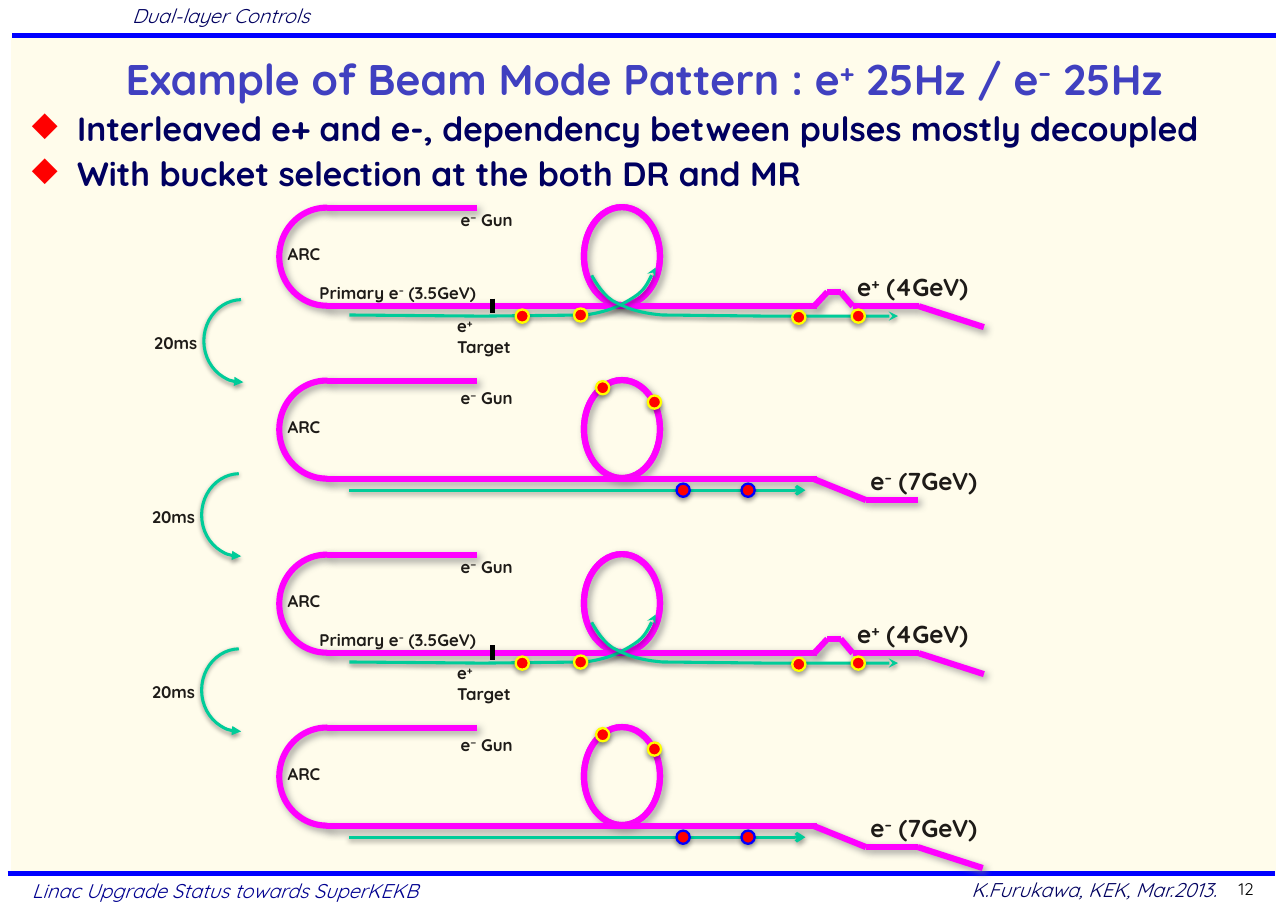
from itertools import pairwise

from lxml import etree
from pptx import Presentation
from pptx import util as u
from pptx.dml.color import RGBColor
from pptx.enum import shapes, text
from pptx.oxml.ns import qn

COLORS = {
    "cream": "FFFCEB", "rule": "0000FF", "title": "4040C0", "navy": "000060",
    "footer": "000090", "ink": "1E1B18", "black": "000000", "beam": "FF00FF",
    "track": "00CC99", "red": "FF0000", "yellow": "FFFF00", "grey": "808080",
}
SOFT = ("grey", 75, 5, 3, 45)
TRACK = ("black", 38, 3.1, 1.6, 90)
BUNCH = ("black", 35, 3.1, 1.8, 90)


def px(n):
    return u.Emu(n * 9144)


def rgb(color):
    return RGBColor.from_string(COLORS[color])


class BeamSlide:
    font = "Quicksand"

    def __init__(self, slide):
        self.slide = slide
        self.shapes = slide.shapes

    def stroke(self, item, color, width, shadow=None, head=None, tail=None):
        item.line.color.rgb = rgb(color)
        item.line.width = u.Pt(width)
        properties = item._element.spPr
        outline = properties.find(qn("a:ln"))
        for end, kind in (("a:headEnd", head), ("a:tailEnd", tail)):
            if kind:
                etree.SubElement(outline, qn(end), type=kind)
        effects = etree.SubElement(properties, qn("a:effectLst"))
        if shadow:
            shade, alpha, blur, distance, angle = shadow
            outer = etree.SubElement(
                effects, qn("a:outerShdw"), blurRad=str(u.Pt(blur)),
                dist=str(u.Pt(distance)), dir=str(angle * 60000),
                algn="ctr", rotWithShape="0")
            tint = etree.SubElement(outer, qn("a:srgbClr"), val=COLORS[shade])
            etree.SubElement(tint, qn("a:alpha"), val=str(alpha * 1000))

    def backdrop(self, x, y, w, h):
        panel = self.shapes.add_shape(
            shapes.MSO_SHAPE.RECTANGLE, px(x), px(y), px(w), px(h))
        panel.fill.solid()
        panel.fill.fore_color.rgb = rgb("cream")
        panel.line.fill.background()
        panel.shadow.inherit = False

    def line(self, start, end, color="beam", width=4, shadow=SOFT, tail=None):
        segment = self.shapes.add_connector(
            shapes.MSO_CONNECTOR.STRAIGHT, *map(px, start + end))
        self.stroke(segment, color, width, shadow, tail=tail)

    def outline(self, kind, x, y, w, h, adjustments, turn=0,
                color="beam", width=4, shadow=SOFT, head=None):
        curve = self.shapes.add_shape(kind, px(x), px(y), px(w), px(h))
        for i, value in enumerate(adjustments):
            curve.adjustments[i] = value
        curve.rotation = turn
        curve.fill.background()
        self.stroke(curve, color, width, shadow, head)

    def bunch(self, x, y, ring):
        dot = self.shapes.add_shape(
            shapes.MSO_SHAPE.OVAL, px(x), px(y), px(12), px(12))
        dot.fill.solid()
        dot.fill.fore_color.rgb = rgb("red")
        self.stroke(dot, ring, 1.5, BUNCH)

    def track(self, points, head=None, tail=None):
        start, *rest = [(px(x), px(y)) for x, y in points]
        builder = self.shapes.build_freeform(*start, scale=1.0)
        builder.add_line_segments(rest, close=False)
        trajectory = builder.convert_to_shape()
        trajectory.fill.background()
        outline = next(trajectory._element.iter(qn("a:path")))
        controls = outline.findall(qn("a:lnTo"))[2:]
        for i in range(0, len(controls), 3):
            bend = etree.SubElement(outline, qn("a:cubicBezTo"))
            for control in controls[i:i + 3]:
                bend.append(control[0])
                outline.remove(control)
        self.stroke(trajectory, "track", 2, TRACK, head, tail)

    def fill_paragraph(self, paragraph, content, size, color, bold, italic, align):
        for i, part in enumerate(content.split("^")):
            run = paragraph.add_run()
            run.text = part
            if i % 2:
                run._r.get_or_add_rPr().set("baseline", "30000")
        paragraph.alignment = align
        paragraph.font.name = self.font
        paragraph.font.size = u.Pt(size)
        paragraph.font.bold = bold
        paragraph.font.italic = italic
        paragraph.font.color.rgb = rgb(color)

    def inset(self, frame, side, top):
        frame.margin_left = frame.margin_right = px(side)
        frame.margin_top = frame.margin_bottom = px(top)

    def label(self, x, y, w, h, content, size=11, color="ink", bold=True,
              italic=False, align=text.PP_ALIGN.LEFT, inset=(0, 0)):
        frame = self.shapes.add_textbox(px(x), px(y), px(w), px(h)).text_frame
        frame.word_wrap = inset != (0, 0)
        self.inset(frame, *inset)
        self.fill_paragraph(frame.paragraphs[0], content, size, color, bold,
                            italic, align)

    def title(self, x, y, w, h, content):
        heading = self.shapes.title
        heading.left, heading.top, heading.width, heading.height = map(px, (x, y, w, h))
        self.shapes._spTree.append(heading._element)
        frame = heading.text_frame
        frame.word_wrap = True
        frame.auto_size = text.MSO_AUTO_SIZE.NONE
        frame.vertical_anchor = text.MSO_ANCHOR.MIDDLE
        self.inset(frame, 11, 5)
        self.fill_paragraph(frame.paragraphs[0], content, 28, "title", True,
                            False, text.PP_ALIGN.CENTER)

    def bullets(self, x, y, w, h, points):
        frame = self.shapes.add_textbox(px(x), px(y), px(w), px(h)).text_frame
        frame.word_wrap = True
        self.inset(frame, 11, 5)
        for i, point in enumerate(points):
            paragraph = frame.add_paragraph() if i else frame.paragraphs[0]
            properties = paragraph._p.get_or_add_pPr()
            properties.set("marL", str(px(41)))
            properties.set("indent", str(px(-41)))
            tint = etree.SubElement(properties, qn("a:buClr"))
            etree.SubElement(tint, qn("a:srgbClr"), val=COLORS["red"])
            etree.SubElement(properties, qn("a:buChar"), char="◆")
            self.fill_paragraph(paragraph, point, 22, "navy", True, False,
                                text.PP_ALIGN.LEFT)
            if i:
                paragraph.space_before = u.Pt(3)

    def linac(self, top, bends):
        base = top + 89
        self.outline(shapes.MSO_SHAPE.DONUT, 520, top + 9, 89, 69, [0], 270)
        self.outline(shapes.MSO_SHAPE.BLOCK_ARC, 252, top + 1, 89, 86,
                     [108, 0, 0], 270)
        self.label(261, top + 32, 35, 19, "ARC")
        self.line((297, top), (433, top))
        self.line((296, base), (742, base))
        for (x1, y1), (x2, y2) in pairwise(bends):
            self.line((x1, base + y1), (x2, base + y2))

    def positron(self, top):
        base = top + 89
        self.linac(top, [(739, 0), (751, -13), (763, -13), (774, 0),
                         (834, 0), (893, 19)])
        self.line((447, base - 7), (447, base + 6), "black", 3, None)
        self.label(418, top + 1, 52, 19, "e^−^ Gun")
        self.label(415, base + 9, 64, 19, "e^+^ Target")
        self.label(290, base - 21, 156, 19, "Primary e^–^ (3.5GeV)")
        self.label(778, base - 31, 104, 27, "e^+^ (4GeV)", 16)
        inward = [(317, 8), (438, 9), (531, 8), (553, 5), (564, -1),
                  (575, -8), (586, -15), (595, -35), (595, -35)]
        outward = [(815, 9), (693, 9), (601, 8), (578, 6), (567, 1),
                   (556, -5), (546, -11), (537, -28), (537, -28)]
        self.track([(x, base + y) for x, y in inward], tail="stealth")
        self.track([(x, base + y) for x, y in outward], head="stealth")
        for x, y in ((719, 4), (773, 3), (468, 3), (521, 2)):
            self.bunch(x, base + y, "yellow")

    def electron(self, top, last):
        base = top + 89
        self.linac(top, [(739, 0), (786, 19), (833, 19)] + [(892, 38)] * last)
        self.label(418, top + 6, 52, 19, "e^−^ Gun")
        self.label(790, base - 12, 102, 27, "e^–^ (7GeV)", 16)
        self.line((317, base + 10), (731, base + 10), "track", 2, TRACK, "arrow")
        for x, y, ring in ((588, 13, "yellow"), (541, 0, "yellow"),
                           (614, 93, "rule"), (673, 93, "rule")):
            self.bunch(x, top + y, ring)


def main():
    deck = Presentation()
    deck.slide_width, deck.slide_height = px(1169), px(827)
    page = BeamSlide(deck.slides.add_slide(deck.slide_layouts[5]))

    page.backdrop(10, 32, 1148, 762)
    page.line((11, 32), (1158, 32), "rule", 3, None)
    page.line((7, 793), (1157, 793), "rule", 3, None)
    page.title(18, 32, 1133, 78,
               "Example of Beam Mode Pattern : e^+^ 25Hz / e^–^ 25Hz")
    page.bullets(18, 93, 1151, 110, [
        "Interleaved e+ and e-, dependency between pulses mostly decoupled",
        "With bucket selection at the both DR and MR"])

    right = text.PP_ALIGN.RIGHT
    page.label(109, -2, 325, 33, "Dual-layer Controls", 13, "navy",
               False, True, inset=(11, 5))
    page.label(18, 793, 401, 33, "Linac Upgrade Status towards SuperKEKB", 13,
               "footer", False, True, inset=(11, 5))
    page.label(794, 792, 321, 33, "K.Furukawa, KEK, Mar.2013.", 13, "navy",
               False, True, right, (11, 5))
    page.label(1081, 793, 68, 28, "12", 11, "black", False, False, right, (11, 5))

    for pulse in range(4):
        top = 189 + round(pulse * 472 / 3)
        if pulse % 2:
            page.electron(top, last=pulse == 3)
        else:
            page.positron(top)

    for x, y in ((185, 272), (183, 430), (183, 589)):
        page.outline(shapes.MSO_SHAPE.ARC, x, y, 69, 75, [52.74, 161.31],
                     color="track", width=2, shadow=TRACK, head="triangle")
        page.label(x - 45, y + 30, 41, 19, "20ms")

    deck.save("out.pptx")


if __name__ == "__main__":
    main()
